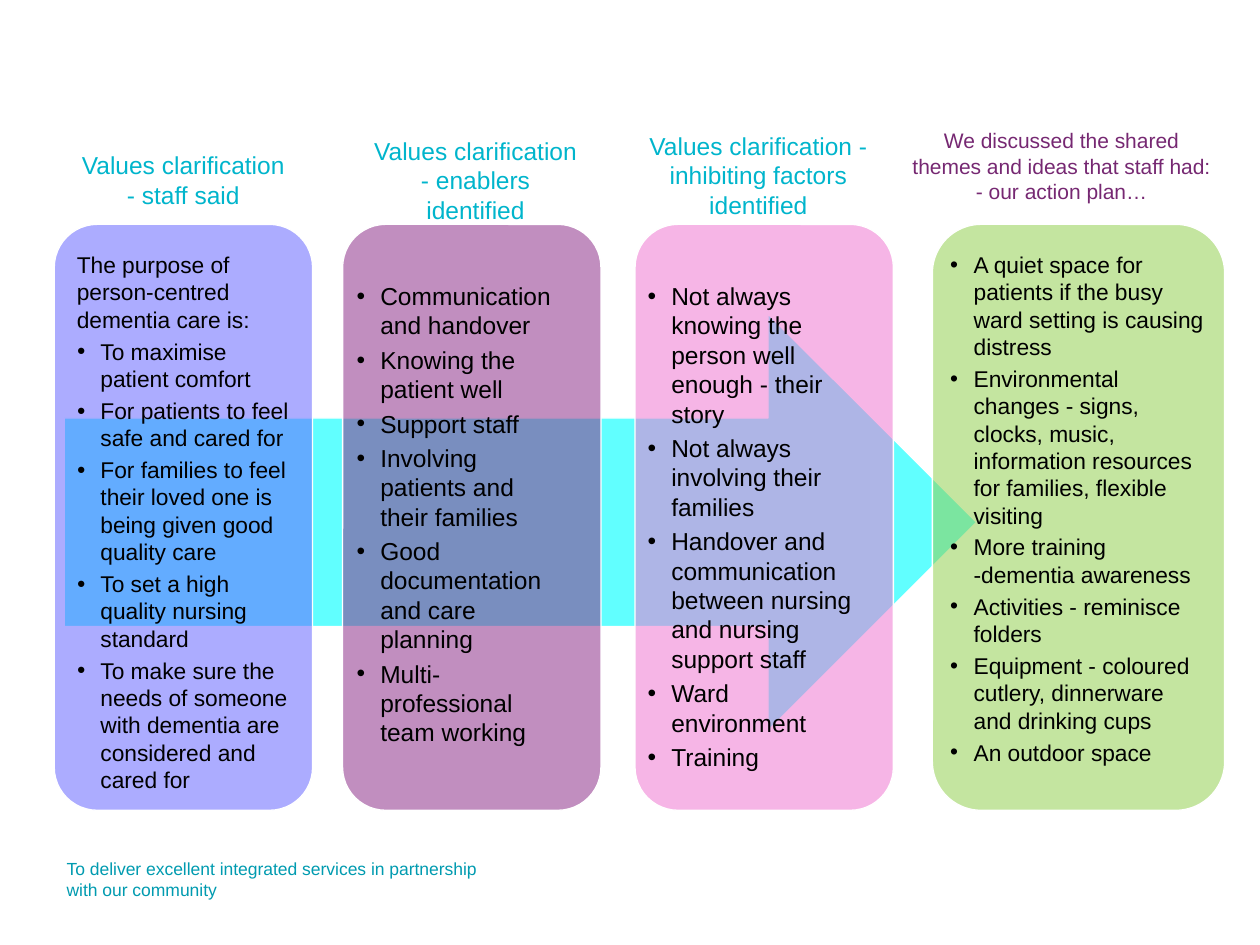
from dataclasses import dataclass

from lxml.etree import SubElement
from pptx import Presentation
from pptx.dml.color import RGBColor
from pptx.enum.shapes import MSO_SHAPE
from pptx.enum.text import MSO_ANCHOR, MSO_AUTO_SIZE, PP_ALIGN
from pptx.oxml.ns import qn
from pptx.slide import Slide
from pptx.util import Pt

WHITE = RGBColor(0xFF, 0xFF, 0xFF)
BLACK = RGBColor(0x00, 0x00, 0x00)
TEAL = RGBColor(0x00, 0x9B, 0xB0)
TURQUOISE = RGBColor(0x00, 0xB5, 0xCC)
PLUM = RGBColor(0x76, 0x28, 0x72)
CYAN = RGBColor(0x00, 0xFF, 0xFF)
BLUE = RGBColor(0x66, 0x66, 0xFF)
PURPLE = RGBColor(0x8E, 0x30, 0x89)
PINK = RGBColor(0xF0, 0x78, 0xD1)
GREEN = RGBColor(0x92, 0xD0, 0x50)

PANEL_TOP, PANEL_HEIGHT = 128.2, 334.8
BULLET_INDENT = 13.5

# Boxes are (left, top, width, height) in points.
COLUMNS = [
    dict(panel=(31, 147.6), colour=BLUE,
         heading="Values clarification - staff said",
         heading_box=(36.7, 71.3, 136.1, 62.6), heading_size=14, heading_colour=TURQUOISE,
         intro="The purpose of person-centred dementia care is:",
         items=["To maximise patient comfort",
                "For patients to feel safe and cared for",
                "For families to feel their loved one is being given good quality care",
                "To set a high quality nursing standard",
                "To make sure the needs of someone with dementia are considered and cared for"],
         list_box=(36.7, 139.7, 141.8, 266.4), list_size=13, bullet="●", bullet_percent=65),
    dict(panel=(195.8, 147.6), colour=PURPLE,
         heading="Values clarification - enablers identified",
         heading_box=(206.6, 66.2, 130.3, 73.4), heading_size=14, heading_colour=TURQUOISE,
         items=["Communication and handover",
                "Knowing the patient well",
                "Support staff",
                "Involving patients and their families",
                "Good documentation and care planning",
                "Multi-professional team working"],
         list_box=(196.6, 157, 135.4, 290.9), list_size=14),
    dict(panel=(362.9, 147.6), colour=PINK,
         heading="Values clarification - inhibiting factors identified",
         heading_box=(354.2, 60.5, 158.4, 79.2), heading_size=14, heading_colour=TURQUOISE,
         items=["Not always knowing the person well enough - their story",
                "Not always involving their families",
                "Handover and communication between nursing and nursing support staff",
                "Ward environment",
                "Training"],
         list_box=(362.9, 157, 133.2, 249.1), list_size=14),
    dict(panel=(532.8, 167), colour=GREEN,
         heading="We discussed the shared themes and ideas that staff had: - our action plan…",
         heading_box=(513.4, 66.2, 186.5, 56.9), heading_size=12, heading_colour=PLUM,
         items=["A quiet space for patients if the busy ward setting is causing distress",
                "Environmental changes - signs, clocks, music, information resources "
                "for families, flexible visiting",
                "More training -dementia awareness",
                "Activities - reminisce folders",
                "Equipment - coloured cutlery, dinnerware and drinking cups",
                "An outdoor space"],
         list_box=(535.7, 139.7, 161.3, 334.8), list_size=13),
]


def set_attributes(target, values):
    for name, value in values.items():
        setattr(target, name, value)


@dataclass
class SlideBuilder:
    slide: Slide
    font_name: str = "Arial"

    def shape(self, kind, box, colour, opacity=100):
        shape = self.slide.shapes.add_shape(kind, *map(Pt, box))
        shape.shadow.inherit = False
        shape.fill.solid()
        shape.fill.fore_color.rgb = colour
        shape.line.color.rgb = WHITE
        shape.line.width = Pt(0.75)
        if opacity < 100:
            colour_xml = shape.fill._xPr.find(qn("a:solidFill"))[0]
            SubElement(colour_xml, qn("a:alpha"), val=str(opacity * 1000))

    def place(self, placeholder, box):
        """Move a placeholder to its box and to the front of the slide."""
        set_attributes(placeholder, dict(zip(("left", "top", "width", "height"), map(Pt, box))))
        self.slide.shapes._spTree.append(placeholder._element)
        return placeholder

    def text_box(self, box):
        return self.slide.shapes.add_textbox(*map(Pt, box))

    def fill_text(self, holder, lines, size, colour, align=PP_ALIGN.LEFT,
                  anchor=MSO_ANCHOR.TOP, spacing=0.0):
        frame = holder.text_frame
        set_attributes(frame, dict(word_wrap=True, auto_size=MSO_AUTO_SIZE.NONE,
                                   vertical_anchor=anchor))
        for number, (line, bullet, percent) in enumerate(lines):
            paragraph = frame.add_paragraph() if number else frame.paragraphs[0]
            paragraph.text = line
            set_attributes(paragraph, dict(alignment=align, line_spacing=1.0, space_after=Pt(0),
                                           space_before=Pt(spacing if number else 0)))
            self.bullet(paragraph, bullet, percent)
            set_attributes(paragraph.font, dict(name=self.font_name, size=Pt(size), bold=False))
            paragraph.font.color.rgb = colour

    def bullet(self, paragraph, mark, percent):
        properties = paragraph._p.get_or_add_pPr()
        indent = Pt(BULLET_INDENT) if mark else 0
        properties.set("marL", str(indent))
        properties.set("indent", str(-indent))
        if mark:
            SubElement(properties, qn("a:buSzPct"), val=str(percent * 1000))
            SubElement(properties, qn("a:buFont"), typeface=self.font_name)
            SubElement(properties, qn("a:buChar"), char=mark)
        else:
            SubElement(properties, qn("a:buNone"))

    def heading(self, holder, column):
        self.fill_text(holder, [(column["heading"], None, 100)], column["heading_size"],
                       column["heading_colour"], PP_ALIGN.CENTER, MSO_ANCHOR.MIDDLE)

    def bullet_list(self, placeholder, column):
        mark, percent = column.get("bullet", "•"), column.get("bullet_percent", 100)
        lines = [(item, mark, percent) for item in column["items"]]
        if "intro" in column:
            lines.insert(0, (column["intro"], None, 100))
        self.fill_text(self.place(placeholder, column["list_box"]), lines, column["list_size"],
                       BLACK, spacing=column["list_size"] * 0.2)


def main():
    presentation = Presentation()
    presentation.slide_width, presentation.slide_height = Pt(720), Pt(540)
    # The Comparison layout holds a title and four body placeholders.
    slide = presentation.slides.add_slide(presentation.slide_layouts.get_by_name("Comparison"))
    builder = SlideBuilder(slide)
    title, *bodies = list(slide.placeholders)

    builder.shape(MSO_SHAPE.RECTANGLE, (0, 462.2, 720, 77.8), WHITE)
    motto = ["To deliver excellent integrated services in partnership", "with our community"]
    builder.fill_text(builder.text_box((31, 486.7, 249.1, 31.7)),
                      [(line, None, 100) for line in motto], 10, TEAL)

    builder.shape(MSO_SHAPE.RIGHT_ARROW, (36.7, 179.3, 521.3, 238.3), CYAN, 62)
    for column in COLUMNS:
        left, width = column["panel"]
        builder.shape(MSO_SHAPE.ROUNDED_RECTANGLE, (left, PANEL_TOP, width, PANEL_HEIGHT),
                      column["colour"], 54)
    for body, column in zip(bodies, COLUMNS):
        builder.bullet_list(body, column)

    first, *others = COLUMNS
    builder.heading(builder.place(title, first["heading_box"]), first)
    for column in others:
        builder.heading(builder.text_box(column["heading_box"]), column)

    presentation.save("out.pptx")


if __name__ == "__main__":
    main()
